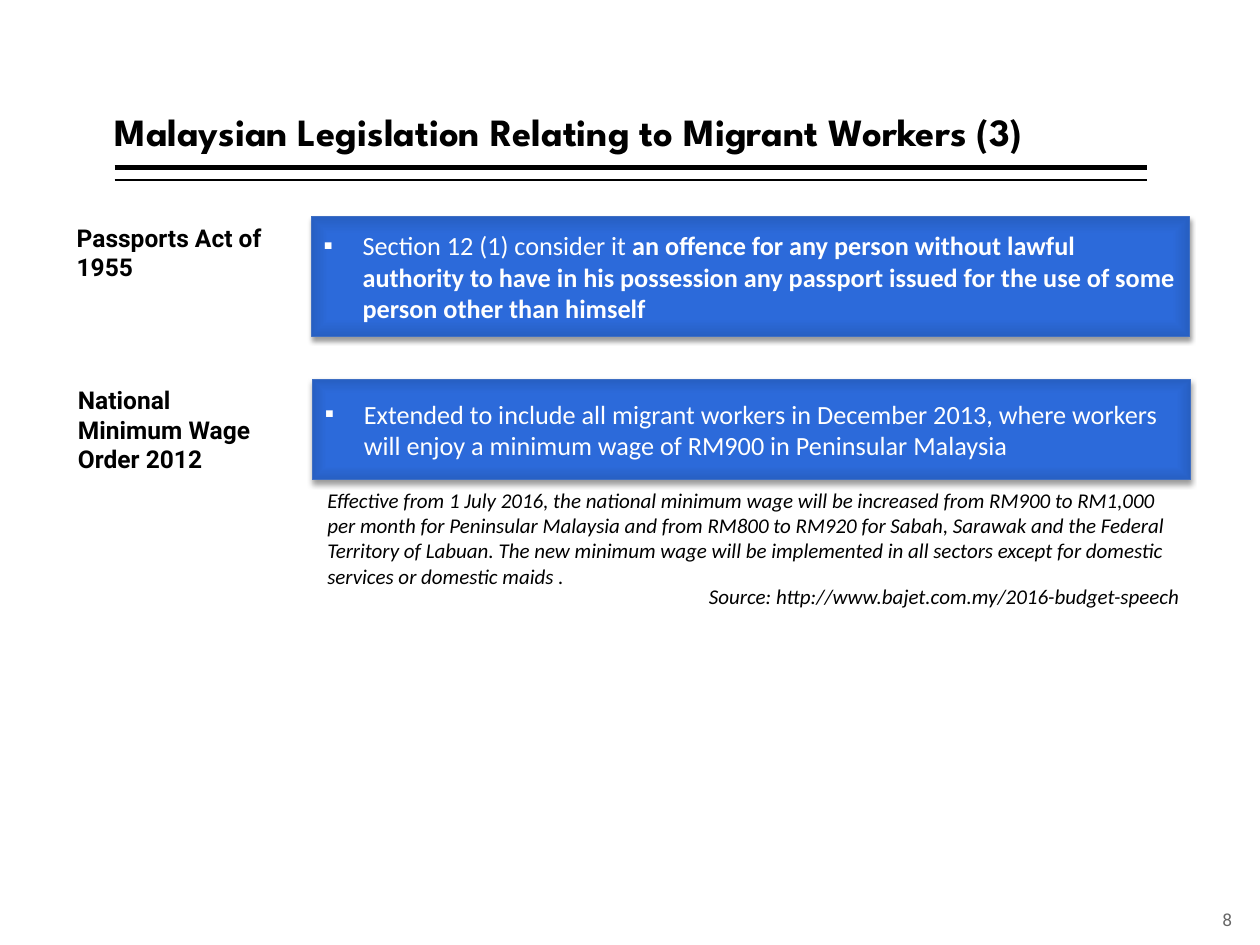
from lxml import etree
from pptx import Presentation
from pptx.dml.color import RGBColor
from pptx.enum.shapes import MSO_CONNECTOR, MSO_SHAPE
from pptx.enum.text import MSO_ANCHOR, PP_ALIGN
from pptx.oxml import parse_xml
from pptx.oxml.ns import nsdecls, qn
from pptx.util import Inches, Pt

BLACK = RGBColor(0x00, 0x00, 0x00)
WHITE = RGBColor(0xFF, 0xFF, 0xFF)
GRAY = RGBColor(0x66, 0x66, 0x66)
BORDER = RGBColor(0x3F, 0x6F, 0xC3)
BLUE_STOPS = [
    (0, RGBColor(0x2C, 0x6B, 0xDC)),
    (71, RGBColor(0x2C, 0x6A, 0xDA)),
    (100, RGBColor(0x27, 0x5F, 0xC2)),
]
STRAIGHT, RECTANGLE = MSO_CONNECTOR.STRAIGHT, MSO_SHAPE.RECTANGLE
TOP, MIDDLE, BOTTOM = MSO_ANCHOR.TOP, MSO_ANCHOR.MIDDLE, MSO_ANCHOR.BOTTOM
LEFT, CENTER, RIGHT = PP_ALIGN.LEFT, PP_ALIGN.CENTER, PP_ALIGN.RIGHT

LABEL_LEFT, LABEL_WIDTH = 0.51, 1.79
BOX_LEFT, BOX_WIDTH = 2.47, 6.97
RULE_LEFT, RULE_RIGHT = 0.91, 9.1

presentation = Presentation()
presentation.slide_width, presentation.slide_height = Inches(10), Inches(7.5)
slide = presentation.slides.add_slide(presentation.slide_layouts[6])


def add_text(bounds, text, size, font, color=BLACK, bold=False, italic=False,
             align=LEFT, anchor=TOP, side_inset=0.1):
    box = slide.shapes.add_textbox(*map(Inches, bounds))
    frame = box.text_frame
    frame.word_wrap = True
    frame.vertical_anchor = anchor
    frame.margin_left = frame.margin_right = Inches(side_inset)
    frame.text = text
    paragraph = frame.paragraphs[0]
    paragraph.alignment = align
    run_font = paragraph.runs[0].font
    run_font.size, run_font.name = Pt(size), font
    run_font.bold, run_font.italic = bold, italic
    run_font.color.rgb = color
    return paragraph


def style_box(shape):
    """Give a box its rectangular gradient, thin border and soft shadow."""
    shape.line.color.rgb = BORDER
    shape.line.width = Pt(0.5)
    stops = "".join(
        f'<a:gs pos="{share * 1000}"><a:srgbClr val="{color}"/></a:gs>'
        for share, color in BLUE_STOPS)
    gradient = parse_xml(
        f'<a:gradFill {nsdecls("a")} rotWithShape="1"><a:gsLst>{stops}</a:gsLst>'
        '<a:path path="rect"><a:fillToRect l="50000" t="50000" r="50000" b="50000"/>'
        '</a:path></a:gradFill>')
    properties = shape.element.spPr
    properties.find(qn("a:ln")).addprevious(gradient)
    shape.shadow.inherit = False
    properties.find(qn("a:effectLst")).append(parse_xml(
        f'<a:outerShdw {nsdecls("a")} blurRad="{Pt(3.1)}" dist="{Pt(2)}" dir="5400000" '
        'algn="ctr" rotWithShape="0"><a:srgbClr val="000000">'
        '<a:alpha val="38000"/></a:srgbClr></a:outerShdw>'))


# Title with its double rule
for y, weight in [(1.33, 3), (1.43, 1)]:
    rule = slide.shapes.add_connector(
        STRAIGHT, Inches(RULE_LEFT), Inches(y), Inches(RULE_RIGHT), Inches(y))
    rule.line.color.rgb = BLACK
    rule.line.width = Pt(weight)
    etree.SubElement(rule.element.spPr, qn("a:effectLst"))

title = add_text((RULE_LEFT, 0.08, 8.07, 1.2),
                 "Malaysian Legislation Relating to Migrant Workers (3)",
                 22, "League Spartan", bold=True, anchor=BOTTOM, side_inset=0)
title.line_spacing = 0.9

# One row per law: label on the left, provision in a blue box
laws = [
    ("Passports Act of 1955", 0, 1.72, 0.95, 0.57, [
        ("Section 12 (1) consider it ", False),
        ("an offence for any person without lawful authority to have in his "
         "possession any passport issued for the use of some person other "
         "than himself", True)]),
    ("National Minimum Wage Order 2012", 0.01, 3.01, 0.8, 0.81, [
        ("Extended to include all migrant workers in December 2013, where "
         "workers will enjoy a minimum wage of RM900 in Peninsular Malaysia",
         False)]),
]
for name, shift, top, box_height, label_height, provision in laws:
    box = slide.shapes.add_shape(
        RECTANGLE, Inches(BOX_LEFT + shift), Inches(top),
        Inches(BOX_WIDTH), Inches(box_height))
    style_box(box)
    box.text_frame.word_wrap = True
    box.text_frame.vertical_anchor = MIDDLE
    paragraph = box.text_frame.paragraphs[0]
    paragraph.alignment = LEFT
    paragraph_properties = paragraph._p.get_or_add_pPr()
    paragraph_properties.set("marL", str(Inches(0.31)))
    paragraph_properties.set("indent", str(Inches(-0.31)))
    etree.SubElement(paragraph_properties, qn("a:buFont"), typeface="Calibri")
    etree.SubElement(paragraph_properties, qn("a:buChar"), char="▪")
    for text, bold in provision:
        run = paragraph.add_run()
        run.text = text
        run.font.size, run.font.name, run.font.bold = Pt(15), "Calibri", bold
        run.font.color.rgb = WHITE
    add_text((LABEL_LEFT + shift, top, LABEL_WIDTH, label_height),
             name, 14, "Roboto", bold=True)

# Note on the wage increase, its source and the page number
add_text((2.5, 3.82, 6.94, 0.91),
         "Effective from 1 July 2016, the national minimum wage will be increased "
         "from RM900 to RM1,000 per month for Peninsular Malaysia and from RM800 to "
         "RM920 for Sabah, Sarawak and the Federal Territory of Labuan. The new "
         "minimum wage will be implemented in all sectors except for domestic "
         "services or domestic maids .",
         12, "Calibri", italic=True)
add_text((4.99, 4.58, 4.47, 0.3),
         "Source: http://www.bajet.com.my/2016-budget-speech",
         12, "Calibri", italic=True, align=RIGHT)
add_text((9.48, 7.1, 0.52, 0.4), "8", 10, "Roboto", color=GRAY,
         align=CENTER, anchor=MIDDLE, side_inset=0)

presentation.save("out.pptx")
